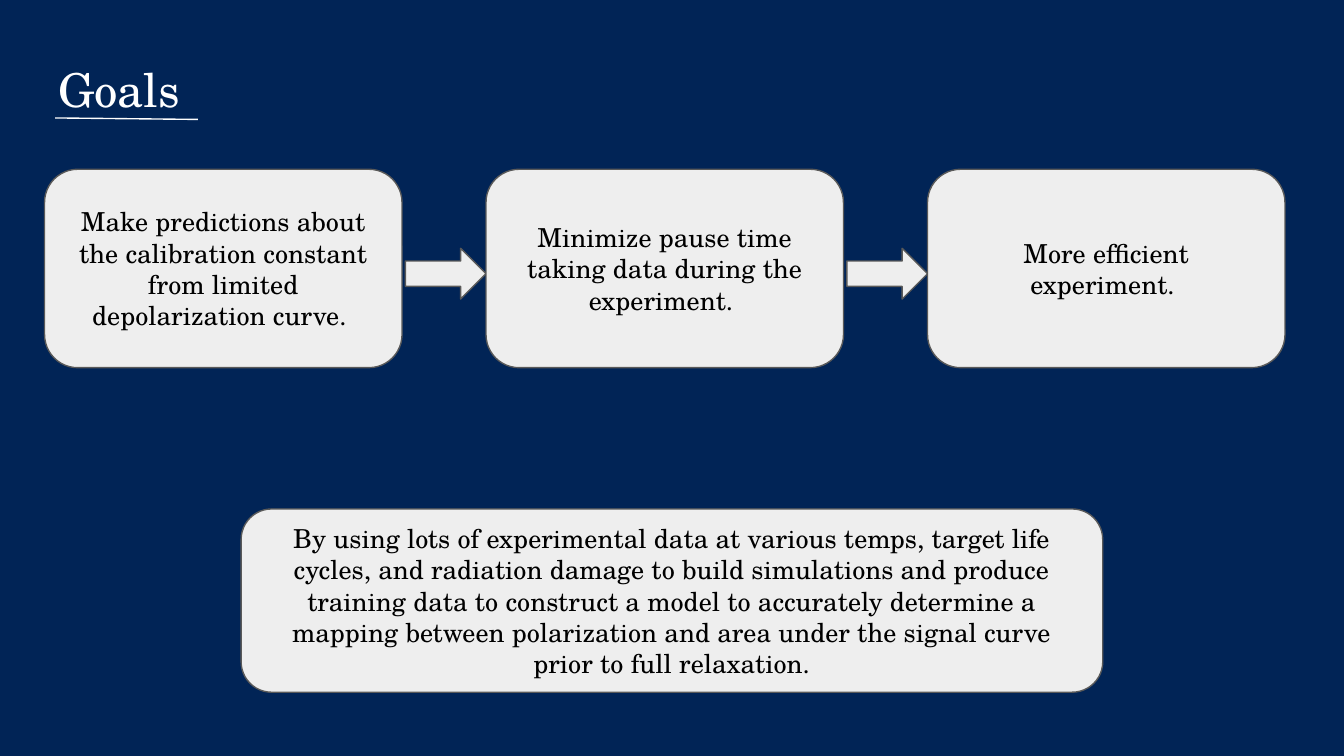
from dataclasses import dataclass

from lxml import etree
from pptx import Presentation
from pptx.dml.color import RGBColor
from pptx.enum import shapes, text
from pptx.oxml import ns
from pptx.util import Pt

FONT = "TeX Gyre Schola"
COLORS = {
    "background": "012456",
    "title": "FFFFFF",
    "panel": "EEEEEE",
    "outline": "595959",
    "body": "000000",
}
INSET = 7.2
LINE_WIDTH = 0.75

# Row of steps, in points
STEP_LEFT, STEP_TOP, STEP_WIDTH, STEP_HEIGHT = 23.9, 90.7, 191.5, 106.3
STEP_PITCH = 236.5
ARROW_WIDTH, ARROW_HEIGHT = 43.2, 27.2


@dataclass
class Panel:
    left: float
    top: float
    width: float
    height: float
    words: str = ""
    kind: shapes.MSO_SHAPE = shapes.MSO_SHAPE.ROUNDED_RECTANGLE


def color(name: str) -> RGBColor:
    return RGBColor.from_string(COLORS[name])


def set_text(tf, words: str, size: float, color_name: str, align, anchor) -> None:
    tf.word_wrap = True
    tf.auto_size = text.MSO_AUTO_SIZE.NONE
    tf.vertical_anchor = anchor
    tf.margin_left = tf.margin_right = tf.margin_top = tf.margin_bottom = Pt(INSET)
    tf.text = words
    p = tf.paragraphs[0]
    p.alignment = align
    p.font.name = FONT
    p.font.size = Pt(size)
    p.font.color.rgb = color(color_name)


def draw_panel(s, panel: Panel) -> None:
    sp = s.shapes.add_shape(panel.kind, Pt(panel.left), Pt(panel.top),
                            Pt(panel.width), Pt(panel.height))
    sp.shadow.inherit = False
    sp.fill.solid()
    sp.fill.fore_color.rgb = color("panel")
    sp.line.color.rgb = color("outline")
    sp.line.width = Pt(LINE_WIDTH)
    if panel.words:
        set_text(sp.text_frame, panel.words, 14, "body",
                 text.PP_ALIGN.CENTER, text.MSO_ANCHOR.MIDDLE)


def draw_title(s, words: str) -> None:
    title = s.shapes.title
    title.left, title.top, title.width, title.height = Pt(23.9), Pt(25.2), Pt(328.3), Pt(44.6)
    set_text(title.text_frame, words, 25, "title",
             text.PP_ALIGN.LEFT, text.MSO_ANCHOR.TOP)
    # Underline
    line = s.shapes.add_connector(shapes.MSO_CONNECTOR.STRAIGHT,
                                  Pt(29.6), Pt(63.2), Pt(106), Pt(64))
    line.line.color.rgb = color("title")
    line.line.width = Pt(LINE_WIDTH)
    etree.SubElement(line._element.spPr, ns.qn("a:effectLst"))


def main() -> None:
    prs = Presentation()
    prs.slide_width, prs.slide_height = Pt(720), Pt(405)
    s = prs.slides.add_slide(prs.slide_layouts[5])
    s.background.fill.solid()
    s.background.fill.fore_color.rgb = color("background")

    draw_title(s, "Goals")

    # Steps, each joined to the next by an arrow
    steps = [
        "Make predictions about the calibration constant from limited depolarization curve. ",
        "Minimize pause time taking data during the experiment. ",
        "More efficient experiment. ",
    ]
    for i, words in enumerate(steps):
        left = STEP_LEFT + i * STEP_PITCH
        draw_panel(s, Panel(left, STEP_TOP, STEP_WIDTH, STEP_HEIGHT, words))
        if i < len(steps) - 1:
            draw_panel(s, Panel(left + STEP_PITCH - ARROW_WIDTH,
                                STEP_TOP + (STEP_HEIGHT - ARROW_HEIGHT) / 2 + 2.8,
                                ARROW_WIDTH, ARROW_HEIGHT,
                                kind=shapes.MSO_SHAPE.RIGHT_ARROW))

    # Method
    draw_panel(s, Panel(
        129.2, 272.7, 461.6, 98.2,
        "By using lots of experimental data at various temps, target life cycles, "
        "and radiation damage to build simulations and produce training data to "
        "construct a model to accurately determine a mapping between polarization "
        "and area under the signal curve prior to full relaxation."))

    prs.save("out.pptx")


if __name__ == "__main__":
    main()
